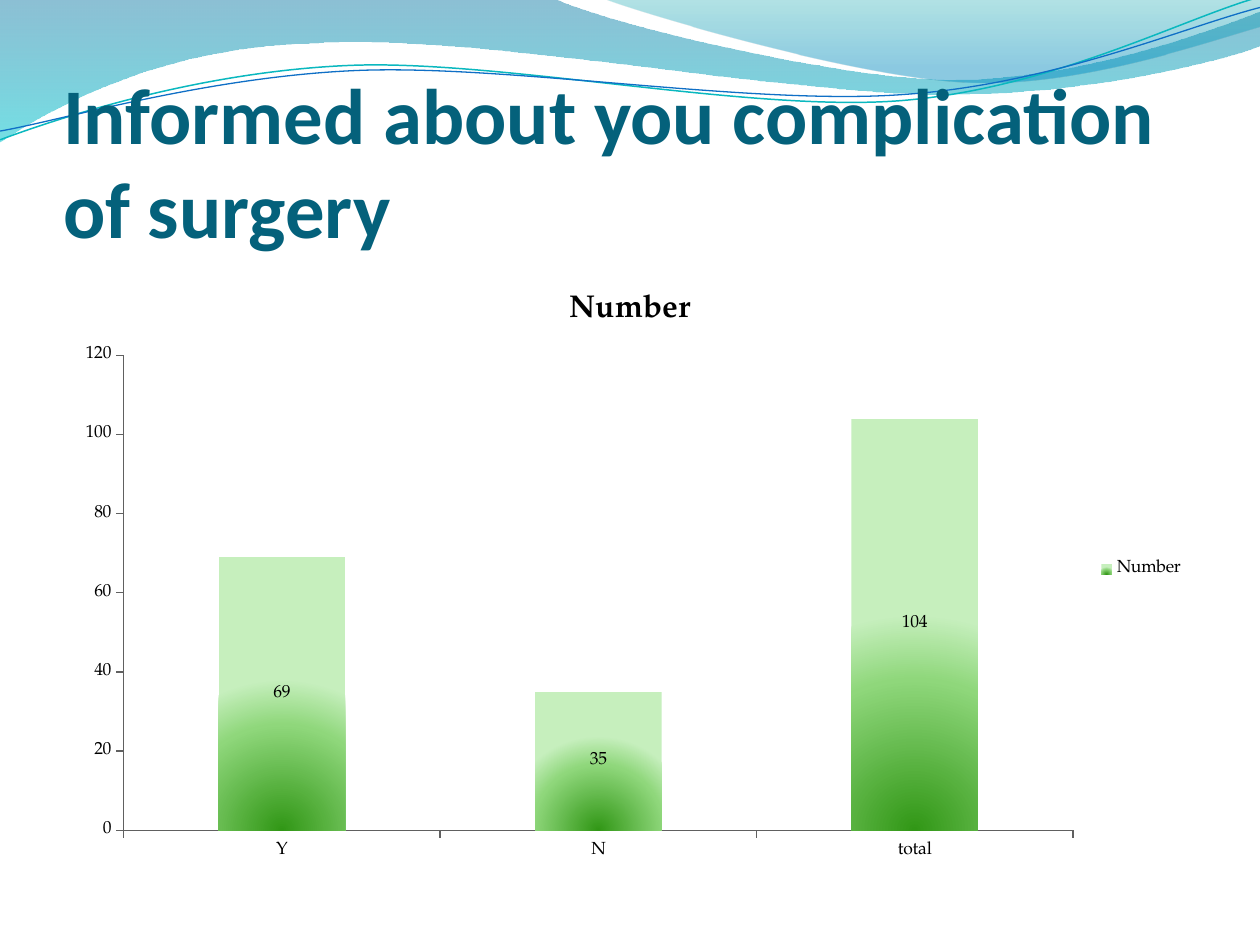
"""Build a slide with a wave banner and a stacked column chart."""
from dataclasses import dataclass
from math import cos, radians, sin

from lxml import etree
from pptx import Presentation
from pptx.chart.data import CategoryChartData
from pptx.dml.color import RGBColor
from pptx.enum import chart as charts, text
from pptx.oxml.ns import qn
from pptx.util import Pt

Point = tuple[float, float]
Segment = tuple[Point, ...]
PIVOT: Point = (359.5, 42)
CURVE_STEPS = 24
CHART_FONT = "TeX Gyre Pagella"


@dataclass(frozen=True)
class Stop:
    position: int
    color: str
    opacity: int = 100


@dataclass(frozen=True)
class Wave:
    start: Point
    segments: tuple[Segment, ...]
    stops: tuple[Stop, ...]


@dataclass(frozen=True)
class Strand:
    start: Point
    segments: tuple[Segment, ...]
    color: str
    width: float
    rotation: float = 357.3


WAVES = (
    Wave((0, 0), (
        ((316.8, -0.7),),
        ((342.7, 12.2), (478.1, 45.4), (545.8, 45.4)),
        ((614.2, 45.4), (689.8, 18.7), (720, 6.5)),
        ((720.7, 25.9),),
        ((707.8, 31.7), (626.4, 54.7), (537.1, 54)),
        ((447.8, 54), (275, 20.2), (185, 24.5)),
        ((92.9, 25.9), (33.1, 59.8), (-0.7, 81.4)),
        ((0, 0),),
    ), (Stop(0, "0074A1", 45), Stop(100, "00C6CF", 55))),
    Wave((344.9, -0.7), (
        ((366.5, 7.9), (491, 44.6), (553.7, 46.8)),
        ((616.3, 49.7), (691.9, 23), (720, 15.1)),
        ((720, 0),),
        ((344.9, -0.7),),
    ), (Stop(0, "00A1A9", 30), Stop(80, "008BBF", 45))),
)
STRANDS = (
    Strand((0, 79.9), (
        ((34.6, 67), (113.8, 41), (199.4, 37.4)),
        ((284.4, 33.8), (427, 64.1), (513.4, 57.6)),
        ((599.8, 51.1), (675.4, 10.8), (718.6, -1.4)),
    ), "0AB8BF", 0.85),
    Strand((0, 74.9), (
        ((33.8, 69.1), (118.1, 43.9), (203.8, 40.3)),
        ((290.2, 36.7), (429.8, 60.5), (516.2, 54)),
        ((601.9, 48.2), (677.5, 15.1), (720, 4.3)),
    ), "0F6FC6", 0.75),
)
BAR_STOPS = (Stop(0, "319716"), Stop(70, "8FD77B"), Stop(100, "C6EFBD"))


def rgb(color: str) -> RGBColor:
    return RGBColor.from_string(color)


def trace(start: Point, segments: tuple[Segment, ...]) -> list[Point]:
    points = [start]
    for segment in segments:
        if len(segment) == 1:
            points.append(segment[0])
            continue
        controls = (points[-1], *segment)
        for step in range(1, CURVE_STEPS + 1):
            t = step / CURVE_STEPS
            weights = ((1 - t) ** 3, 3 * t * (1 - t) ** 2, 3 * t * t * (1 - t), t ** 3)
            points.append(tuple(
                sum(w * c[axis] for w, c in zip(weights, controls)) for axis in (0, 1)
            ))
    return points


def turn(point: Point, degrees: float) -> Point:
    angle = radians(degrees)
    x, y = point[0] - PIVOT[0], point[1] - PIVOT[1]
    return (PIVOT[0] + x * cos(angle) - y * sin(angle),
            PIVOT[1] + x * sin(angle) + y * cos(angle))


def add_outline(page, start: Point, segments: tuple[Segment, ...], close: bool):
    corners = [(Pt(x), Pt(y)) for x, y in trace(start, segments)]
    builder = page.shapes.build_freeform(*corners[0], scale=1.0)
    builder.add_line_segments(corners[1:], close=close)
    shape = builder.convert_to_shape()
    shape.shadow.inherit = False
    outline = shape.element.find(".//" + qn("a:path"))
    for child in list(outline):
        outline.remove(child)
    for index, segment in enumerate(((start,), *segments)):
        kind = "a:cubicBezTo" if len(segment) == 3 else "a:lnTo" if index else "a:moveTo"
        command = etree.SubElement(outline, qn(kind))
        for x, y in segment:
            etree.SubElement(command, qn("a:pt"),
                             x=str(Pt(x) - shape.left), y=str(Pt(y) - shape.top))
    if close:
        etree.SubElement(outline, qn("a:close"))
    return shape


def set_gradient(fill, owner, stops: tuple[Stop, ...], radial: bool = False) -> None:
    fill.gradient()
    gradient = owner.find(".//" + qn("a:gradFill"))
    for child in list(gradient):
        gradient.remove(child)
    stop_list = etree.SubElement(gradient, qn("a:gsLst"))
    for stop in stops:
        entry = etree.SubElement(stop_list, qn("a:gs"), pos=str(stop.position * 1000))
        color = etree.SubElement(entry, qn("a:srgbClr"), val=stop.color)
        if stop.opacity < 100:
            etree.SubElement(color, qn("a:alpha"), val=str(stop.opacity * 1000))
    if radial:
        shade = etree.SubElement(gradient, qn("a:path"), path="circle")
        etree.SubElement(shade, qn("a:fillToRect"), l="50000", t="100000", r="50000", b="0")
    else:
        etree.SubElement(gradient, qn("a:lin"), ang="5400000", scaled="0")


def add_wave(page, wave: Wave) -> None:
    shape = add_outline(page, wave.start, wave.segments, True)
    set_gradient(shape.fill, shape.element, wave.stops)
    shape.line.fill.background()


def add_strand(page, strand: Strand) -> None:
    level = tuple(tuple(turn(p, -strand.rotation) for p in s) for s in strand.segments)
    shape = add_outline(page, turn(strand.start, -strand.rotation), level, False)
    shape.rotation = strand.rotation
    shape.fill.background()
    shape.line.color.rgb = rgb(strand.color)
    shape.line.width = Pt(strand.width)


def set_title(page, wording: str) -> None:
    title = page.shapes.title
    title.left, title.top, title.width, title.height = Pt(36), Pt(55.4), Pt(648), Pt(90)
    frame = title.text_frame
    frame.word_wrap = True
    frame.auto_size = text.MSO_AUTO_SIZE.NONE
    frame.vertical_anchor = text.MSO_ANCHOR.BOTTOM
    frame.margin_left = frame.margin_right = frame.margin_bottom = 0
    frame.margin_top = Pt(3.6)
    para = frame.paragraphs[0]
    para.alignment = text.PP_ALIGN.LEFT
    span = para.add_run()
    span.text = wording
    span.font.name, span.font.size, span.font.bold = "Calibri", Pt(45), True
    span.font.color.rgb = rgb("04617B")
    page.shapes.element.append(title.element)


def set_font(font, size: float, bold: bool = False) -> None:
    font.name, font.size, font.bold = CHART_FONT, Pt(size), bold
    font.color.rgb = rgb("000000")


def add_number_chart(page) -> None:
    data = CategoryChartData()
    data.categories = ["Y", "N", "total"]
    data.add_series("Number", (69, 35, 104))
    chart = page.shapes.add_chart(charts.XL_CHART_TYPE.COLUMN_STACKED,
                                  Pt(36), Pt(152.6), Pt(648), Pt(345.6), data).chart
    set_font(chart.font, 10)
    chart.has_title = True
    span = chart.chart_title.text_frame.paragraphs[0].add_run()
    span.text = "Number"
    set_font(span.font, 18, True)
    chart.has_legend = True
    chart.legend.position = charts.XL_LEGEND_POSITION.RIGHT
    chart.legend.include_in_layout = False
    for axis in (chart.category_axis, chart.value_axis):
        axis.has_major_gridlines = False
        axis.major_tick_mark = charts.XL_TICK_MARK.OUTSIDE
        axis.format.line.color.rgb = rgb("606060")
    plot = chart.plots[0]
    plot.vary_by_categories = False
    plot.gap_width, plot.overlap = 150, 100
    series = plot.series[0]
    set_gradient(series.format.fill, chart.element, BAR_STOPS, radial=True)
    series.data_labels.show_value = True
    set_font(series.data_labels.font, 10)


def main() -> None:
    deck = Presentation()
    deck.slide_width, deck.slide_height = Pt(720), Pt(540)
    page = deck.slides.add_slide(deck.slide_layouts[5])
    for wave in WAVES:
        add_wave(page, wave)
    for strand in STRANDS:
        add_strand(page, strand)
    set_title(page, "Informed about you complication of surgery")
    add_number_chart(page)
    deck.save("out.pptx")


if __name__ == "__main__":
    main()
